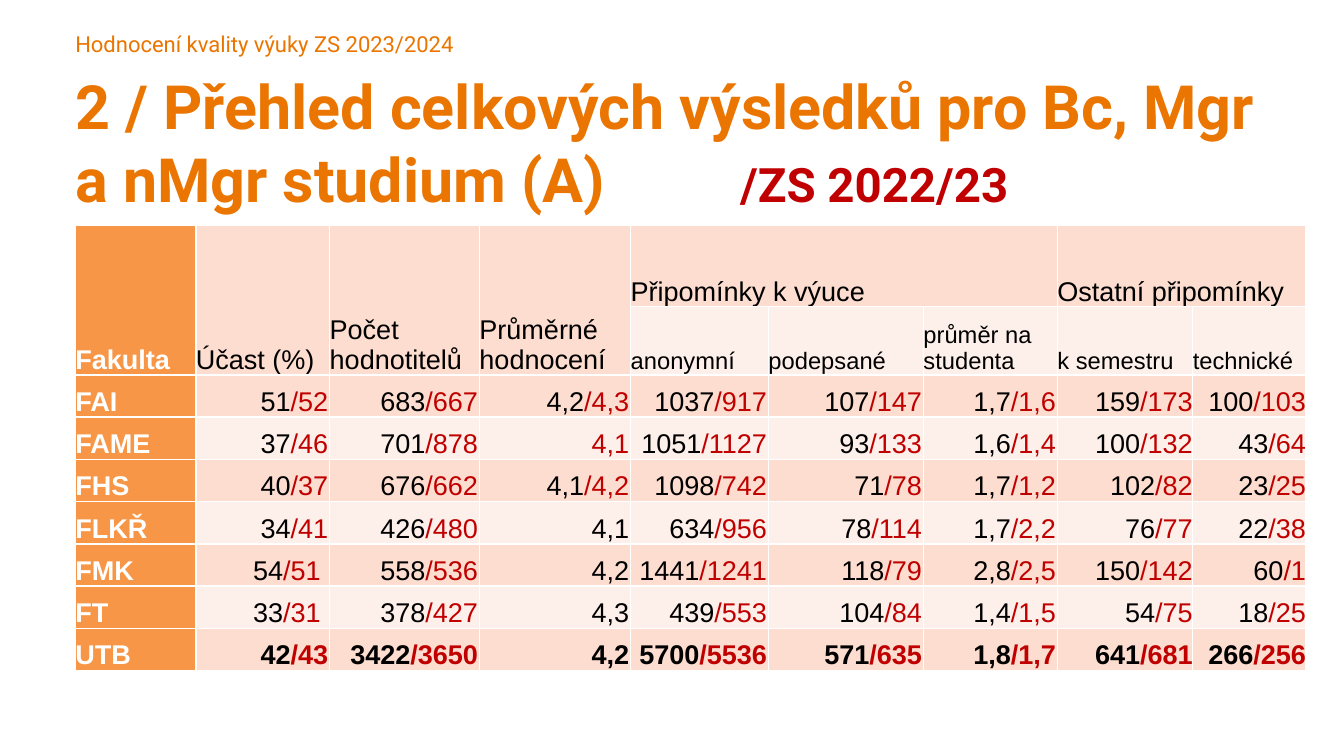
from lxml.etree import SubElement
from pptx import Presentation
from pptx.dml.color import RGBColor
from pptx.enum.text import MSO_ANCHOR, MSO_AUTO_SIZE, PP_ALIGN
from pptx.oxml import parse_xml
from pptx.oxml.ns import nsdecls, qn
from pptx.util import Cm, Pt

ORANGE, RED, BLACK, WHITE = "EA7500", "C00000", "000000", "FFFFFF"
FACULTY_FILL = "F79646"
BAND_FILLS = ("FCDDCF", "FDEFE9")
LEFT, TEXT_WIDTH = Cm(1.57), Cm(25.2)

COLUMN_WIDTHS = (2.51, 2.79, 3.12, 3.15, 2.87, 3.23, 2.79, 2.82, 2.36)
ROW_HEIGHTS = (1.69, 1.42) + (0.88,) * 7

# Header cells: text, row, column, rows spanned, columns spanned
HEADERS = (
    ("Fakulta", 0, 0, 2, 1),
    ("Účast (%)", 0, 1, 2, 1),
    ("Počet hodnotitelů", 0, 2, 2, 1),
    ("Průměrné hodnocení", 0, 3, 2, 1),
    ("Připomínky k výuce", 0, 4, 1, 3),
    ("Ostatní připomínky", 0, 7, 1, 2),
    ("anonymní", 1, 4, 1, 1),
    ("podepsané", 1, 5, 1, 1),
    ("průměr na studenta", 1, 6, 1, 1),
    ("k semestru", 1, 7, 1, 1),
    ("technické", 1, 8, 1, 1),
)

# Each value reads "this year/last year"
RESULTS = (
    ("FAI", "51/52", "683/667", "4,2/4,3", "1037/917", "107/147", "1,7/1,6", "159/173", "100/103"),
    ("FAME", "37/46", "701/878", "4,1", "1051/1127", "93/133", "1,6/1,4", "100/132", "43/64"),
    ("FHS", "40/37", "676/662", "4,1/4,2", "1098/742", "71/78", "1,7/1,2", "102/82", "23/25"),
    ("FLKŘ", "34/41", "426/480", "4,1", "634/956", "78/114", "1,7/2,2", "76/77", "22/38"),
    ("FMK", "54/51 ", "558/536", "4,2", "1441/1241", "118/79", "2,8/2,5", "150/142", "60/1"),
    ("FT", "33/31 ", "378/427", "4,3", "439/553", "104/84", "1,4/1,5", "54/75", "18/25"),
    ("UTB", "42/43", "3422/3650", "4,2", "5700/5536", "571/635", "1,8/1,7", "641/681", "266/256"),
)
TOTAL = "UTB"
RED_ONLY = {("FAME", 3)}


def colour(value):
    return RGBColor.from_string(value)


def add_span(para, text, size=16, font="Arial", ink=BLACK, bold=False):
    span = para.add_run()
    span.text = text
    span.font.size = Pt(size)
    span.font.name = font
    span.font.bold = bold
    span.font.color.rgb = colour(ink)


def set_frame(frame, anchor):
    frame.margin_left = frame.margin_right = frame.margin_top = frame.margin_bottom = 0
    frame.word_wrap = True
    frame.auto_size = MSO_AUTO_SIZE.NONE
    frame.vertical_anchor = anchor


def add_kicker(slide):
    box = slide.shapes.add_textbox(LEFT, Cm(0.64), TEXT_WIDTH, Cm(0.56))
    set_frame(box.text_frame, MSO_ANCHOR.TOP)
    add_span(box.text_frame.paragraphs[0], "Hodnocení kvality výuky ZS 2023/2024",
             size=13, font="Roboto", ink=ORANGE)


def fill_title(slide):
    title = slide.shapes.title
    title.left, title.top, title.width, title.height = LEFT, Cm(1.4), TEXT_WIDTH, Cm(3.07)
    set_frame(title.text_frame, MSO_ANCHOR.BOTTOM)
    para = title.text_frame.paragraphs[0]
    para.alignment = PP_ALIGN.LEFT
    # A tab stop places the comparison term on the second line
    tabs = SubElement(para._p.get_or_add_pPr(), qn("a:tabLst"))
    SubElement(tabs, qn("a:tab"), pos=str(Cm(13.85)), algn="l")
    add_span(para, "2 / Přehled celkových výsledků pro Bc, Mgr a nMgr studium (A)\t",
             size=36, font="Roboto", ink=ORANGE, bold=True)
    add_span(para, "/ZS 2022/23", size=28, font="Roboto", ink=RED, bold=True)


def style_cell(cell, fill, side_margin=0.0):
    cell.fill.solid()
    cell.fill.fore_color.rgb = colour(fill)
    cell.vertical_anchor = MSO_ANCHOR.BOTTOM
    cell.margin_left = cell.margin_right = cell.margin_top = Cm(side_margin)
    cell.margin_bottom = 0
    properties = cell._tc.get_or_add_tcPr()
    for index, side in enumerate(("lnL", "lnR", "lnT", "lnB")):
        properties.insert(index, parse_xml(
            f'<a:{side} {nsdecls("a")} w="{Pt(1)}"><a:solidFill>'
            f'<a:srgbClr val="{WHITE}"/></a:solidFill></a:{side}>'))


def fill_headers(table):
    for text, row, column, rows, columns in HEADERS:
        cell = table.cell(row, column)
        if rows * columns > 1:
            cell.merge(table.cell(row + rows - 1, column + columns - 1))
        add_span(cell.text_frame.paragraphs[0], text, size=14 if row else 16,
                 ink=BLACK if column else WHITE, bold=column == 0)


def fill_results(table):
    for row, (faculty, *values) in enumerate(RESULTS, start=2):
        add_span(table.cell(row, 0).text_frame.paragraphs[0], faculty, ink=WHITE, bold=True)
        for column, value in enumerate(values, start=1):
            para = table.cell(row, column).text_frame.paragraphs[0]
            para.alignment = PP_ALIGN.RIGHT
            current, slash, previous = value.partition("/")
            bold = faculty == TOTAL
            add_span(para, current, ink=RED if (faculty, column) in RED_ONLY else BLACK, bold=bold)
            if slash:
                add_span(para, slash + previous, ink=RED, bold=bold)


def add_results_table(slide):
    table = slide.shapes.add_table(
        len(ROW_HEIGHTS), len(COLUMN_WIDTHS), LEFT, Cm(4.7),
        Cm(sum(COLUMN_WIDTHS)), Cm(sum(ROW_HEIGHTS))).table
    table.first_row = table.horz_banding = False
    for column, width in zip(table.columns, COLUMN_WIDTHS):
        column.width = Cm(width)
    for row, height in zip(table.rows, ROW_HEIGHTS):
        row.height = Cm(height)
    for row in range(len(ROW_HEIGHTS)):
        for column in range(len(COLUMN_WIDTHS)):
            fill = BAND_FILLS[row % 2] if column else FACULTY_FILL
            inset = row > 1 and 1 <= column <= 6
            style_cell(table.cell(row, column), fill, 0.03 if inset else 0)
    fill_headers(table)
    fill_results(table)


def main():
    deck = Presentation()
    deck.slide_width, deck.slide_height = Cm(28), Cm(15.75)
    slide = deck.slides.add_slide(deck.slide_layouts[5])
    add_kicker(slide)
    fill_title(slide)
    add_results_table(slide)
    deck.save("out.pptx")


if __name__ == "__main__":
    main()
